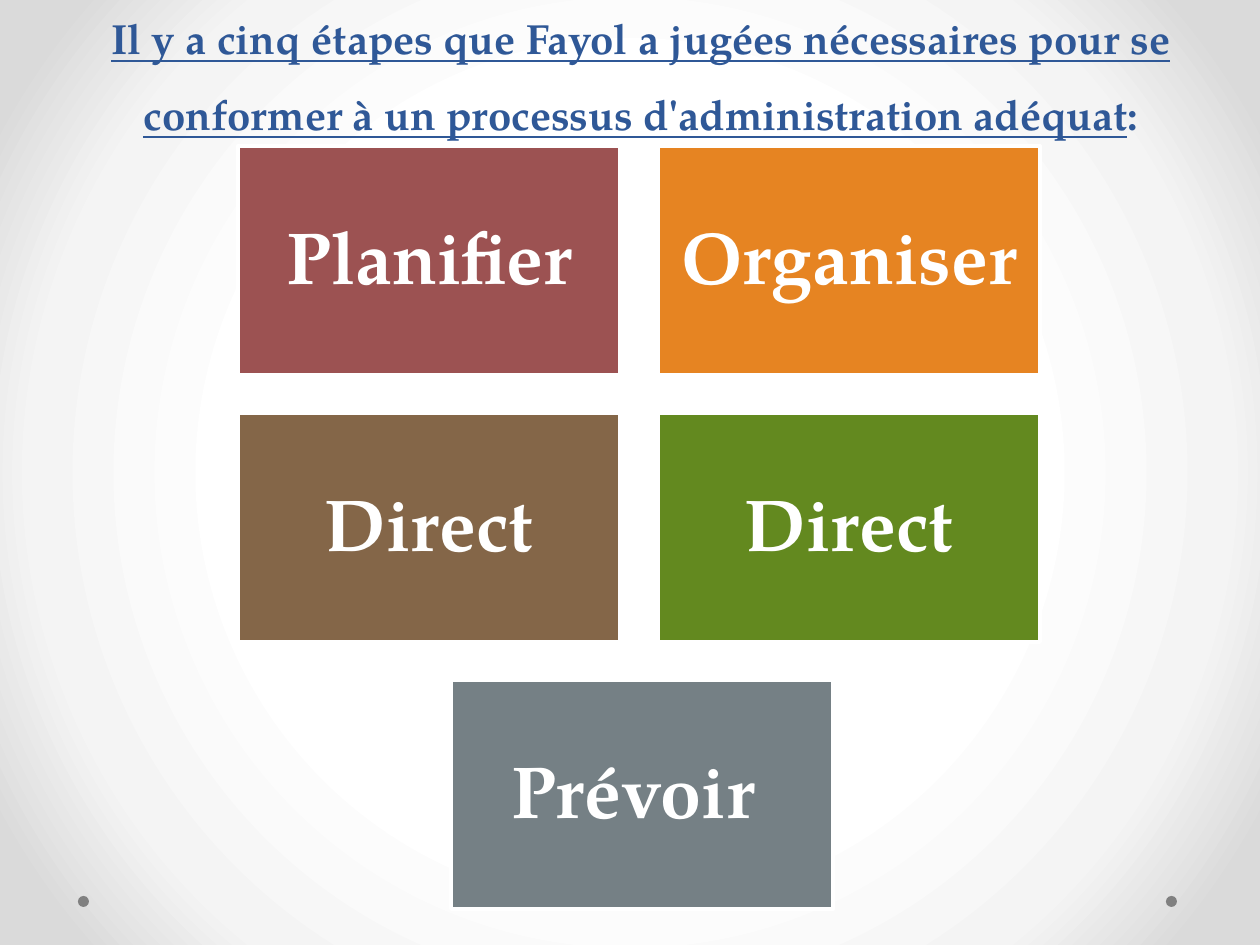
from pptx import Presentation
from pptx.dml.color import RGBColor
from pptx.enum.shapes import MSO_SHAPE
from pptx.enum.text import MSO_ANCHOR, MSO_AUTO_SIZE, PP_ALIGN
from pptx.oxml import parse_xml
from pptx.oxml.ns import nsdecls, qn
from pptx.util import Pt

RECTANGLE, OVAL = MSO_SHAPE.RECTANGLE, MSO_SHAPE.OVAL
MIDDLE, BOTTOM = MSO_ANCHOR.MIDDLE, MSO_ANCHOR.BOTTOM
CENTER = PP_ALIGN.CENTER
NO_AUTOFIT = MSO_AUTO_SIZE.NONE

WHITE = RGBColor(0xFF, 0xFF, 0xFF)
BLUE = RGBColor(0x2F, 0x58, 0x97)
GREY = RGBColor(0x80, 0x80, 0x80)
RED = RGBColor(0x9C, 0x52, 0x52)
ORANGE = RGBColor(0xE6, 0x84, 0x22)
BROWN = RGBColor(0x84, 0x66, 0x48)
GREEN = RGBColor(0x63, 0x89, 0x1F)
SLATE = RGBColor(0x75, 0x80, 0x85)

HEADING = [
    ("Il y a cinq étapes que Fayol a jugées nécessaires pour se conformer "
     "à un processus d'administration adéquat", True),
    (":", False),
]
STEP_ROWS = [
    (238, [("Planifier", RED), ("Organiser", ORANGE)]),
    (238, [("Direct", BROWN), ("Direct", GREEN)]),
    (451, [("Prévoir ", SLATE)]),
]
BACKGROUND_STOPS = [(50, WHITE), (76, RGBColor(0xF4, 0xF4, 0xF4)),
                    (92, RGBColor(0xDA, 0xDA, 0xDA))]

FONT = "TeX Gyre Pagella"
HEADING_FONT = {"name": FONT, "size": Pt(24), "bold": True}
STEP_FONT = {"name": FONT, "size": Pt(42), "bold": True}
HEADING_FRAME = {"vertical_anchor": BOTTOM, "word_wrap": True, "auto_size": NO_AUTOFIT}

SCALE = 914400 / 126
STEP_TOP, STEP_WIDTH, STEP_HEIGHT, STEP_GAP = 146, 382, 229, 38
DOT_LEFTS, DOT_TOP, DOT_SIZE = (78, 1166), 896, 11


def px(length):
    return round(length * SCALE)


STEP_FRAME = {"vertical_anchor": MIDDLE, "word_wrap": True}
STEP_FRAME.update({f"margin_{side}": px(21) for side in ("left", "top", "right", "bottom")})


def apply(target, values):
    for name, value in values.items():
        setattr(target, name, value)


def add_run(paragraph, text, color, values):
    run = paragraph.add_run()
    run.text = text
    apply(run.font, values)
    run.font.color.rgb = color


def add_filled(slide, kind, box, color):
    shape = slide.shapes.add_shape(kind, *map(px, box))
    shape.shadow.inherit = False
    shape.fill.solid()
    shape.fill.fore_color.rgb = color
    return shape


def paint_background(slide):
    slide.background.fill.gradient()
    gradient = slide.element.find(".//" + qn("a:gradFill"))
    stops = "".join(f'<a:gs pos="{percent * 1000}"><a:srgbClr val="{color}"/></a:gs>'
                    for percent, color in BACKGROUND_STOPS)
    gradient.getparent().replace(gradient, parse_xml(
        f'<a:gradFill {nsdecls("a")} rotWithShape="1"><a:gsLst>{stops}</a:gsLst>'
        '<a:path path="circle"><a:fillToRect l="50000" t="50000" r="50000" b="50000"/>'
        '</a:path></a:gradFill>'))


def set_heading(slide):
    heading = slide.shapes.title
    apply(heading, {"left": px(84), "top": 0, "width": px(1113), "height": px(145)})
    apply(heading.text_frame, HEADING_FRAME)
    paragraph = heading.text_frame.paragraphs[0]
    apply(paragraph, {"alignment": CENTER, "line_spacing": 1.5})
    for text, underline in HEADING:
        add_run(paragraph, text, BLUE, {**HEADING_FONT, "underline": underline})


def add_step(slide, left, top, label, color):
    step = add_filled(slide, RECTANGLE, (left, top, STEP_WIDTH, STEP_HEIGHT), color)
    step.line.color.rgb = WHITE
    step.line.width = Pt(2.25)
    apply(step.text_frame, STEP_FRAME)
    paragraph = step.text_frame.paragraphs[0]
    apply(paragraph, {"alignment": CENTER, "line_spacing": 0.9})
    add_run(paragraph, label, WHITE, STEP_FONT)


def main():
    presentation = Presentation()
    presentation.slide_width, presentation.slide_height = px(1260), px(945)
    slide = presentation.slides.add_slide(presentation.slide_layouts[5])
    paint_background(slide)
    for left in DOT_LEFTS:
        dot = add_filled(slide, OVAL, (left, DOT_TOP, DOT_SIZE, DOT_SIZE), GREY)
        dot.line.fill.background()
    set_heading(slide)
    for row, (row_left, steps) in enumerate(STEP_ROWS):
        top = STEP_TOP + row * (STEP_HEIGHT + STEP_GAP)
        for column, (label, color) in enumerate(steps):
            add_step(slide, row_left + column * (STEP_WIDTH + STEP_GAP), top, label, color)
    presentation.save("out.pptx")


if __name__ == "__main__":
    main()
